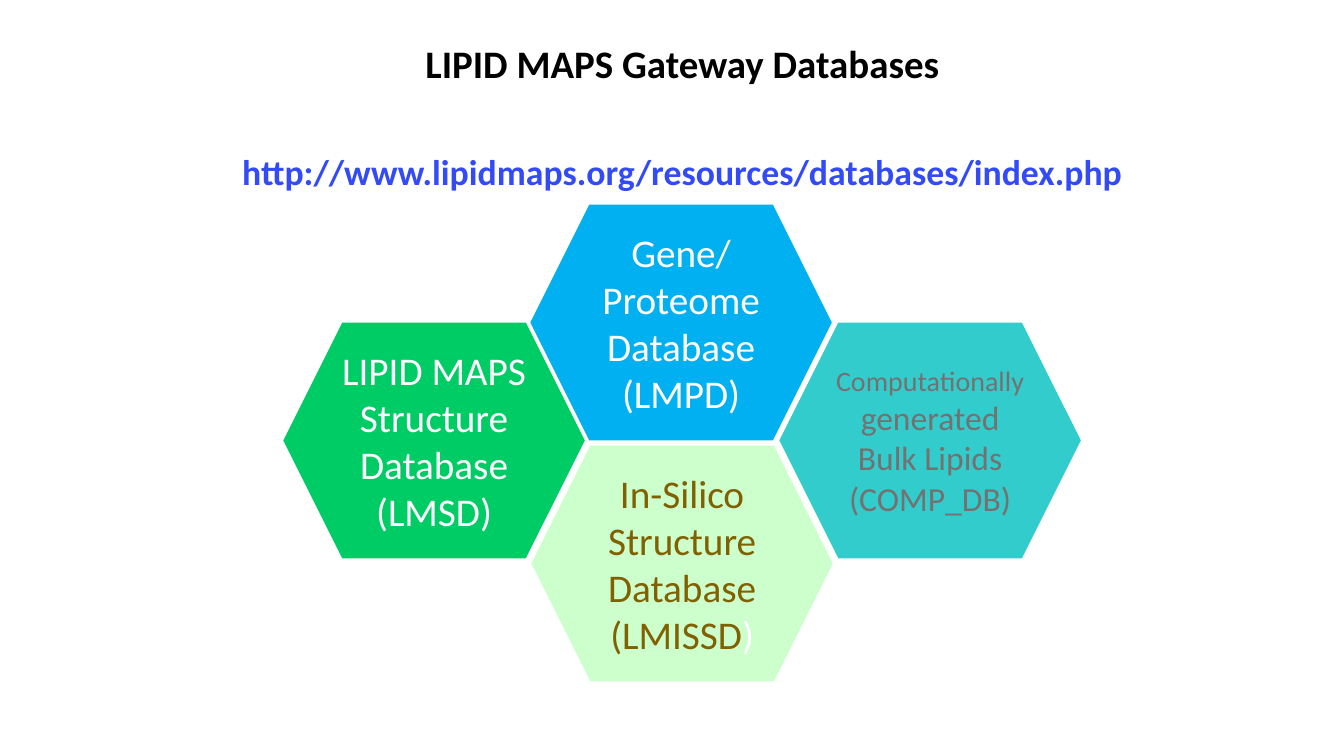
from lxml import etree
from pptx import Presentation
from pptx import util as u
from pptx.dml.color import RGBColor
from pptx.enum import shapes, text
from pptx.oxml.ns import qn

COLORS = {
    "black": "000000", "white": "FFFFFF", "link": "334AF7",
    "green": "00CC66", "blue": "00B0F0", "mint": "CCFFCC",
    "teal": "33CCCC", "brown": "806000", "gray": "767171",
}


def add_run(p, words, size=28, color="white", bold=False, raised=None):
    r = p.add_run()
    r.text = words
    r.font.name = "Calibri"
    r.font.size = u.Pt(size)
    r.font.bold = bold
    r.font.color.rgb = RGBColor.from_string(COLORS[color])
    if raised:
        r.font._element.set("baseline", str(raised * 1000))


class DatabaseSlide:
    def __init__(self, prs):
        self.s = prs.slides.add_slide(prs.slide_layouts[5])
        self.group = self.s.shapes.add_group_shape()

    def fill_frame(self, tf, paragraphs, anchor, inset):
        tf.word_wrap = True
        tf.vertical_anchor = anchor
        tf.margin_left = tf.margin_right = u.Inches(inset)
        tf.margin_top = tf.margin_bottom = u.Inches(0.05)
        for i, runs in enumerate(paragraphs):
            p = tf.paragraphs[0] if i == 0 else tf.add_paragraph()
            p.alignment = text.PP_ALIGN.CENTER
            p.line_spacing = 1.0
            for words, style in runs:
                add_run(p, words, **style)

    def title(self, paragraphs):
        sp = self.s.shapes.title
        sp.left, sp.top = u.Inches(0.77), u.Inches(0.26)
        sp.width, sp.height = u.Inches(12), u.Inches(1.38)
        tf = sp.text_frame
        self.fill_frame(tf, paragraphs, text.MSO_ANCHOR.TOP, 0.1)
        tf.auto_size = text.MSO_AUTO_SIZE.SHAPE_TO_FIT_TEXT
        for p in tf.paragraphs[1:]:
            p.space_before = u.Pt(0)
            before = p._p.pPr.find(qn("a:spcBef"))
            before.remove(before[0])
            etree.SubElement(before, qn("a:spcPct"), val="50000")

    def hexagon(self, left, top, fill, paragraphs):
        sp = self.group.shapes.add_shape(
            shapes.MSO_SHAPE.HEXAGON, u.Inches(left), u.Inches(top),
            u.Inches(2.99), u.Inches(2.34))
        sp.shadow.inherit = False
        sp.fill.solid()
        sp.fill.fore_color.rgb = RGBColor.from_string(COLORS[fill])
        sp.line.fill.background()
        self.fill_frame(sp.text_frame, paragraphs, text.MSO_ANCHOR.MIDDLE, 0.05)


def main():
    prs = Presentation()
    prs.slide_width, prs.slide_height = u.Inches(13.33), u.Inches(7.5)
    slide = DatabaseSlide(prs)
    slide.title([
        [("LIPID MAPS Gateway Databases",
          dict(size=48, color="black", bold=True, raised=30))],
        [("http://www.lipidmaps.org/resources/databases/index.php",
          dict(size=44, color="link", bold=True, raised=30))],
    ])
    databases = [
        (2.81, 3.2, "green", [[("LIPID MAPS Structure Database (LMSD)", {})]]),
        (5.26, 2.03, "blue", [[("Gene/ Proteome", {})], [("Database (LMPD)", {})]]),
        (5.27, 4.42, "mint", [[
            ("In-Silico Structure Database (LMISSD", dict(color="brown")),
            (")", {})]]),
        (7.73, 3.2, "teal", [[
            ("Computationally ", dict(size=20, color="gray")),
            ("generated Bulk Lipids (COMP_DB)", dict(size=24, color="gray"))]]),
    ]
    for database in databases:
        slide.hexagon(*database)
    prs.save("out.pptx")


if __name__ == "__main__":
    main()
